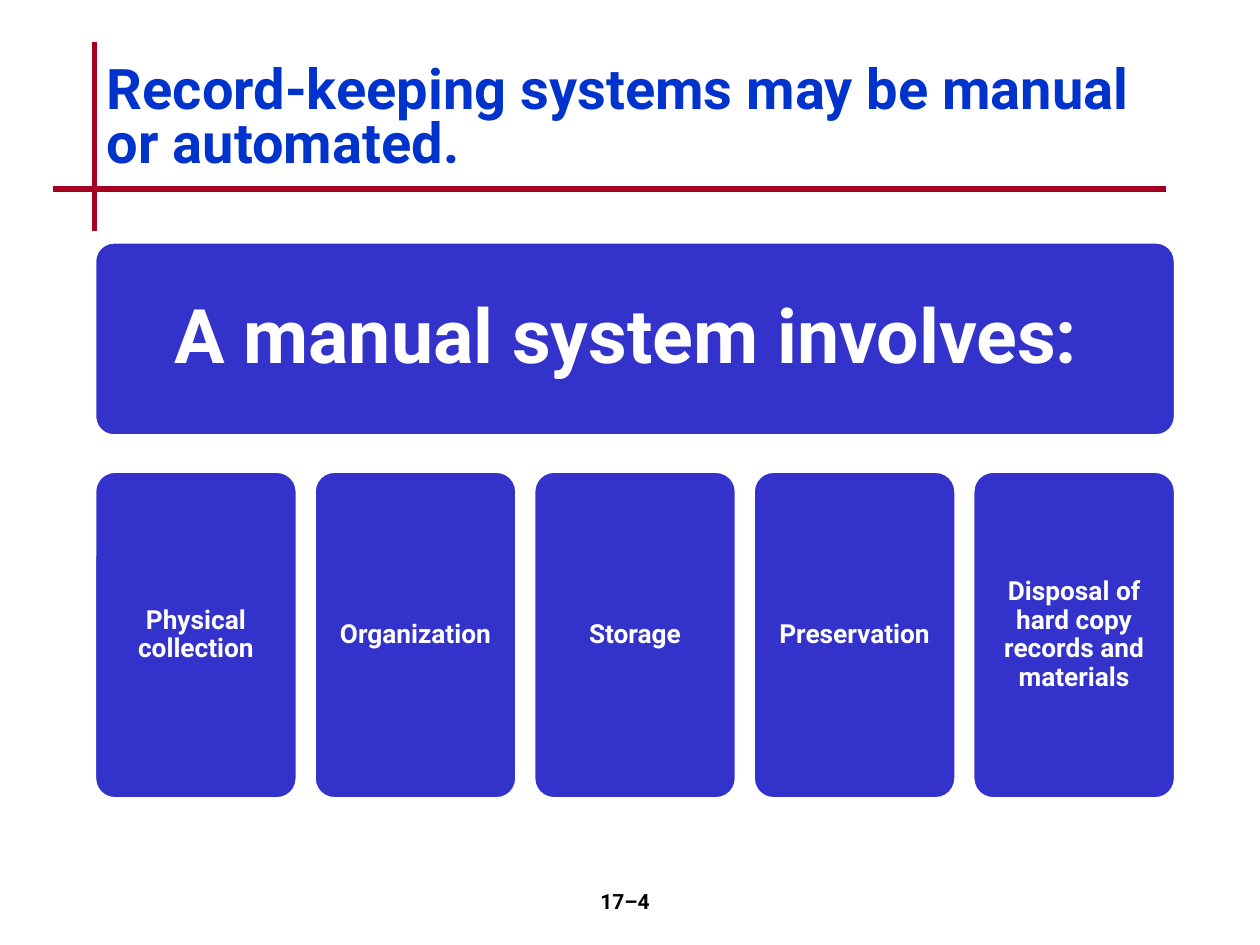
import pptx
import pptx.dml.color
import pptx.enum.shapes
import pptx.enum.text
import pptx.oxml.ns
import pptx.util
from pptx.util import Inches

COLORS = {"rule": "A50021", "card": "3333CC", "white": "FFFFFF",
          "title": "0033CC", "black": "000000"}
ALIGN = pptx.enum.text.PP_ALIGN
ANCHOR = pptx.enum.text.MSO_ANCHOR


def rgb(name):
    return pptx.dml.color.RGBColor.from_string(COLORS[name])


def write_text(shape, text, *, size, color, align=ALIGN.CENTER,
               anchor=ANCHOR.MIDDLE, line_spacing=1.0, margin=None):
    frame = shape.text_frame
    frame.word_wrap = True
    frame.vertical_anchor = anchor
    if margin is not None:
        frame.margin_left = frame.margin_right = Inches(margin)
        frame.margin_top = frame.margin_bottom = Inches(margin)
    paragraph = frame.paragraphs[0]
    paragraph.alignment = align
    paragraph.line_spacing = line_spacing
    run = paragraph.add_run()
    run.text = text
    run.font.name = "Roboto"
    run.font.size = pptx.util.Pt(size)
    run.font.bold = True
    run.font.color.rgb = rgb(color)


presentation = pptx.Presentation()
presentation.slide_width = Inches(10)
presentation.slide_height = Inches(7.5)
slide = presentation.slides.add_slide(presentation.slide_layouts[6])
shapes = slide.shapes

# Crossed rules beside and below the title
for x1, y1, x2, y2 in [(0.75, 0.33, 0.75, 1.83), (0.42, 1.5, 9.25, 1.5)]:
    rule = shapes.add_connector(pptx.enum.shapes.MSO_CONNECTOR.STRAIGHT,
                                Inches(x1), Inches(y1), Inches(x2), Inches(y2))
    rule.line.color.rgb = rgb("rule")
    rule.line.width = pptx.util.Pt(3)
    properties = rule._element.spPr
    properties.append(properties.makeelement(pptx.oxml.ns.qn("a:effectLst"), {}))

# Banner over a row of equal cards
left, total_width, card_width = 0.75, 8.58, 1.61
topics = ["Physical collection", "Organization", "Storage", "Preservation",
          "Disposal of hard copy records and materials"]
step = (total_width - card_width) / (len(topics) - 1)
cards = [("A manual system involves: ", left, 1.92, total_width, 1.54, 43, 0.18)]
for index, topic in enumerate(topics):
    cards.append((topic, left + index * step, 3.74, card_width, 2.6, 15, 0.06))

for text, x, y, width, height, size, margin in cards:
    card = shapes.add_shape(pptx.enum.shapes.MSO_SHAPE.ROUNDED_RECTANGLE,
                            Inches(x), Inches(y), Inches(width), Inches(height))
    card.adjustments[0] = 0.1
    card.shadow.inherit = False
    card.fill.solid()
    card.fill.fore_color.rgb = rgb("card")
    card.line.color.rgb = rgb("white")
    card.line.width = pptx.util.Pt(2)
    write_text(card, text, size=size, color="white", line_spacing=0.9, margin=margin)

title = shapes.add_textbox(Inches(0.75), Inches(0.33), Inches(8.5), Inches(1.25))
write_text(title, "Record-keeping systems may be manual or automated.",
           size=32, color="title", align=ALIGN.LEFT, line_spacing=0.8)

page_number = shapes.add_textbox(Inches(3.92), Inches(7), Inches(2.08), Inches(0.5))
write_text(page_number, "17–4", size=12, color="black", anchor=ANCHOR.TOP)

presentation.save("out.pptx")
